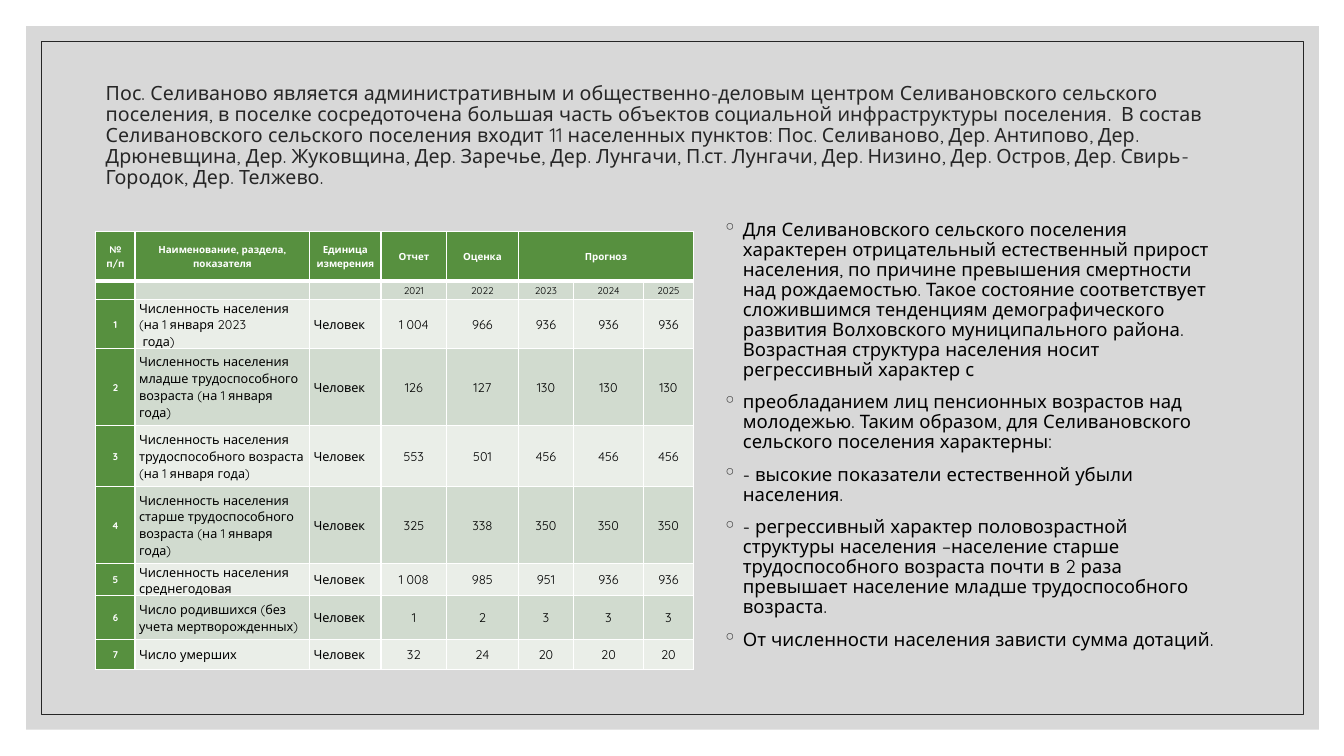
from lxml.etree import SubElement
from pptx import Presentation
from pptx.dml.color import RGBColor
from pptx.enum.shapes import MSO_SHAPE as SHAPE
from pptx.enum.text import MSO_ANCHOR as ANCHOR, PP_ALIGN as ALIGN
from pptx.oxml.ns import qn
from pptx.util import Inches, Pt

GREEN, BAND_DARK, BAND_LIGHT = "57903F", "D1DBCF", "EAEEE8"
INK, WHITE, BLACK = "262626", "FFFFFF", "000000"


def paint(color_format, color):
    """Fill a solid fill or a line with a hex colour."""
    color_format.solid()
    color_format.fore_color.rgb = RGBColor.from_string(color)


def write(frame, text, size=14, color=BLACK, bold=False, align=ALIGN.LEFT,
          spacing=0.9, before=0, bullet=None):
    """Put the lines of text into a frame, one paragraph a line."""
    frame.word_wrap = True
    for number, line in enumerate(text.split("\n")):
        paragraph = frame.paragraphs[0] if number == 0 else frame.add_paragraph()
        paragraph.alignment = align
        paragraph.line_spacing = spacing
        paragraph.space_before = Pt(before)
        if bullet:
            props = paragraph._p.get_or_add_pPr()
            props.set("marL", str(Inches(0.2)))
            props.set("indent", str(-Inches(0.2)))
            bullet_color = SubElement(props, qn("a:buClr"))
            SubElement(bullet_color, qn("a:srgbClr"), val=INK)
            SubElement(props, qn("a:buChar"), char=bullet)
        if not line:
            SubElement(paragraph._p, qn("a:endParaRPr"), sz=str(size * 100))
            continue
        run = paragraph.add_run()
        run.text = line
        run.font.name = "Quicksand"
        run.font.size = Pt(size)
        run.font.bold = bold
        run.font.color.rgb = RGBColor.from_string(color)


prs = Presentation()
prs.slide_width, prs.slide_height = Inches(13.33), Inches(7.5)
slide = prs.slides.add_slide(prs.slide_layouts[6])
paint(slide.background.fill, WHITE)

# Grey backdrop and thin inner frame
backdrop = slide.shapes.add_shape(
    SHAPE.RECTANGLE, Inches(0.26), Inches(0.26), Inches(12.82), Inches(6.98))
backdrop.shadow.inherit = False
backdrop.line.fill.background()
paint(backdrop.fill, "BFBFBF")
backdrop_color = backdrop.fill._xPr.find(qn("a:solidFill"))[0]
SubElement(backdrop_color, qn("a:alpha"), val="60000")

inner_frame = slide.shapes.add_shape(
    SHAPE.RECTANGLE, Inches(0.41), Inches(0.41), Inches(12.52), Inches(6.68))
inner_frame.shadow.inherit = False
inner_frame.fill.background()
paint(inner_frame.line.fill, INK)
inner_frame.line.width = Pt(0.5)

# Introduction
intro = slide.shapes.add_textbox(
    Inches(0.95), Inches(0.7), Inches(11.52), Inches(1.3)).text_frame
intro.vertical_anchor = ANCHOR.MIDDLE
write(intro, "Пос. Селиваново является административным и общественно-деловым "
      "центром Селивановского сельского поселения, в поселке сосредоточена "
      "большая часть объектов социальной инфраструктуры поселения.  В состав "
      "Селивановского сельского поселения входит 11 населенных пунктов: "
      "Пос. Селиваново, Дер. Антипово, Дер. Дрюневщина, Дер. Жуковщина, "
      "Дер. Заречье, Дер. Лунгачи, П.ст. Лунгачи, Дер. Низино, Дер. Остров, "
      "Дер. Свирь-Городок, Дер. Телжево.", color=INK)

# Population table
indicators = [
    ("Численность населения (на 1 января 2023\n года)",
     ["1 004", "966", "936", "936", "936"]),
    ("Численность населения младше трудоспособного возраста (на 1 января года)",
     ["126", "127", "130", "130", "130"]),
    ("Численность населения трудоспособного возраста (на 1 января года)",
     ["553", "501", "456", "456", "456"]),
    ("Численность населения старше трудоспособного возраста (на 1 января года)",
     ["325", "338", "350", "350", "350"]),
    ("Численность населения среднегодовая",
     ["1 008", "985", "951", "936", "936"]),
    ("Число родившихся (без учета мертворожденных)", ["1", "2", "3", "3", "3"]),
    ("Число умерших", ["32", "24", "20", "20", "20"]),
]
rows = [
    ["№ п/п", "Наименование, раздела, показателя", "Единица измерения",
     "Отчет", "Оценка", "Прогноз", "", ""],
    ["", "", "", "2021", "2022", "2023", "2024", "2025"],
]
for number, (indicator, values) in enumerate(indicators, 1):
    rows.append([str(number), indicator, "Человек", *values])

col_widths = [0.39, 1.73, 0.71, 0.65, 0.71, 0.55, 0.69, 0.5]
row_heights = [0.49, 0.18, 0.49, 0.76, 0.61, 0.76, 0.32, 0.43, 0.3]
population = slide.shapes.add_table(
    len(rows), len(col_widths), Inches(0.95), Inches(2.3),
    Inches(sum(col_widths)), Inches(sum(row_heights))).table
for column, width in zip(population.columns, col_widths):
    column.width = Inches(width)
for row, height in zip(population.rows, row_heights):
    row.height = Inches(height)
population.cell(0, 5).merge(population.cell(0, 7))

for r, texts in enumerate(rows):
    for c, text in enumerate(texts):
        cell = population.cell(r, c)
        is_green = r == 0 or c == 0
        cell.vertical_anchor = ANCHOR.MIDDLE
        cell.margin_left = cell.margin_right = Inches(0.04)
        cell.margin_top = cell.margin_bottom = 0
        write(cell.text_frame, text, size=7 if is_green or r == 1 else 9,
              color=WHITE if is_green else BLACK, bold=is_green, spacing=1.07,
              align=ALIGN.LEFT if r > 1 and c in (1, 2) else ALIGN.CENTER)
        # White borders, thick under the header
        cell_props = cell._tc.get_or_add_tcPr()
        for side in ("L", "R", "T", "B"):
            thick = (r, side) in ((0, "B"), (1, "T"))
            border = SubElement(cell_props, qn(f"a:ln{side}"),
                                w=str(Pt(3 if thick else 1)))
            border_fill = SubElement(border, qn("a:solidFill"))
            SubElement(border_fill, qn("a:srgbClr"), val=WHITE)
        band = BAND_DARK if r % 2 else BAND_LIGHT
        paint(cell.fill, GREEN if is_green else band)

# Conclusions
conclusions = slide.shapes.add_textbox(
    Inches(7.07), Inches(2.14), Inches(5.1), Inches(4.57)).text_frame
write(conclusions, "\n".join([
    "Для Селивановского сельского поселения характерен отрицательный "
    "естественный прирост населения, по причине превышения смертности над "
    "рождаемостью. Такое состояние соответствует сложившимся тенденциям "
    "демографического развития Волховского муниципального района. Возрастная "
    "структура населения носит регрессивный характер с",
    "преобладанием лиц пенсионных возрастов над молодежью. Таким образом, для "
    "Селивановского сельского поселения характерны:",
    "- высокие показатели естественной убыли населения.",
    "- регрессивный характер половозрастной структуры населения –население "
    "старше трудоспособного возраста почти в 2 раза превышает население младше "
    "трудоспособного возраста.",
    "От численности населения зависти сумма дотаций.",
]), size=13.2, before=9, bullet="◦")

prs.save("out.pptx")
